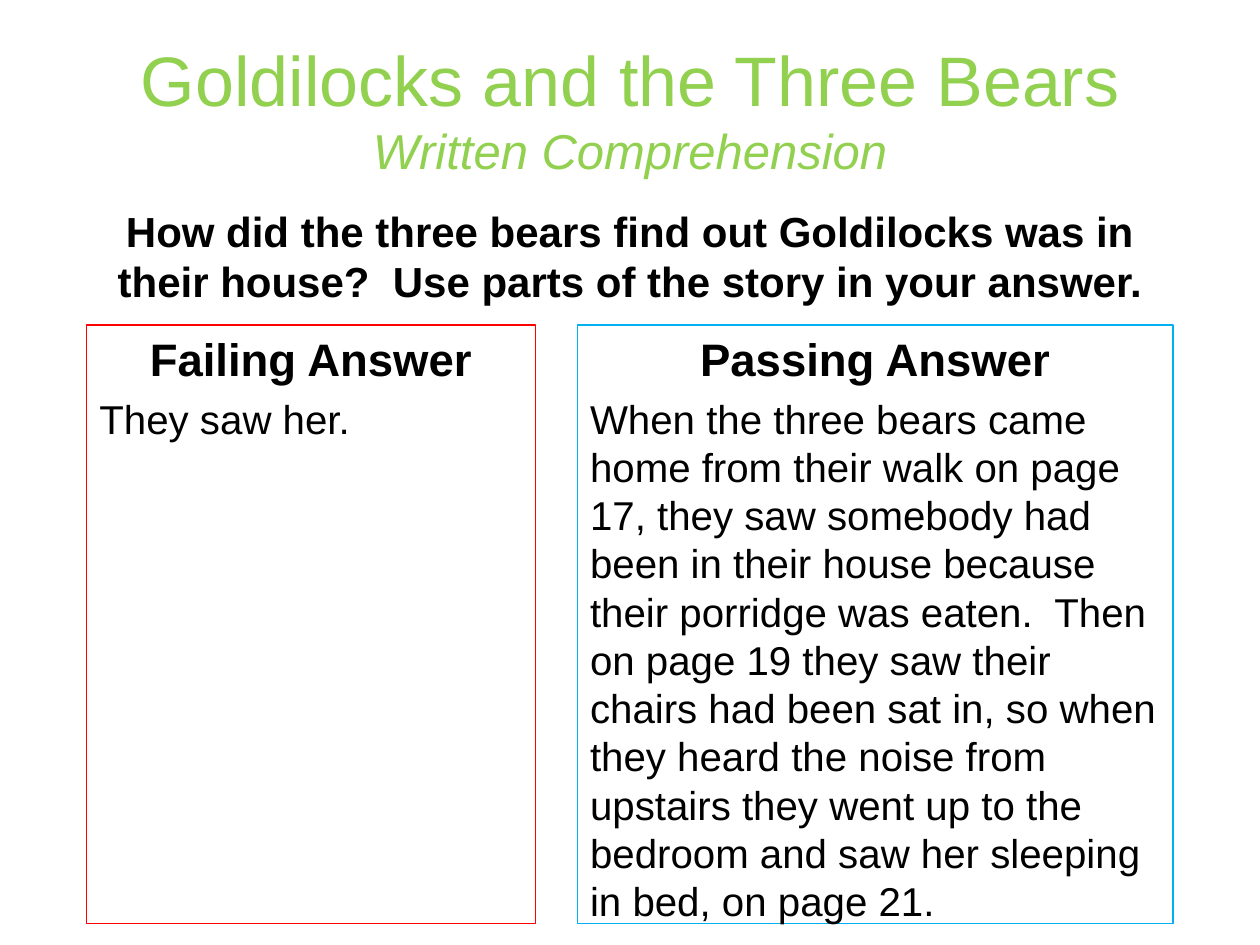
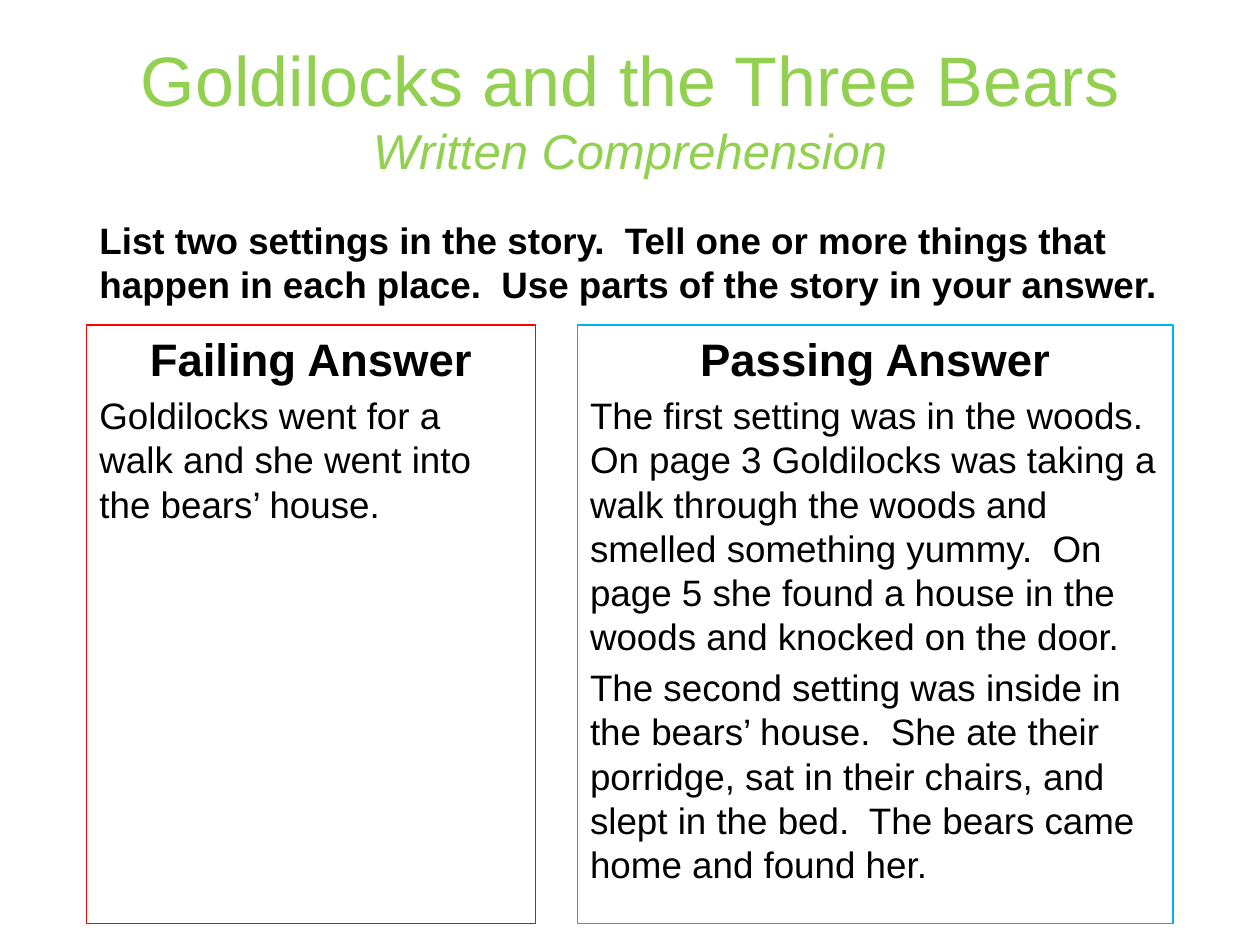
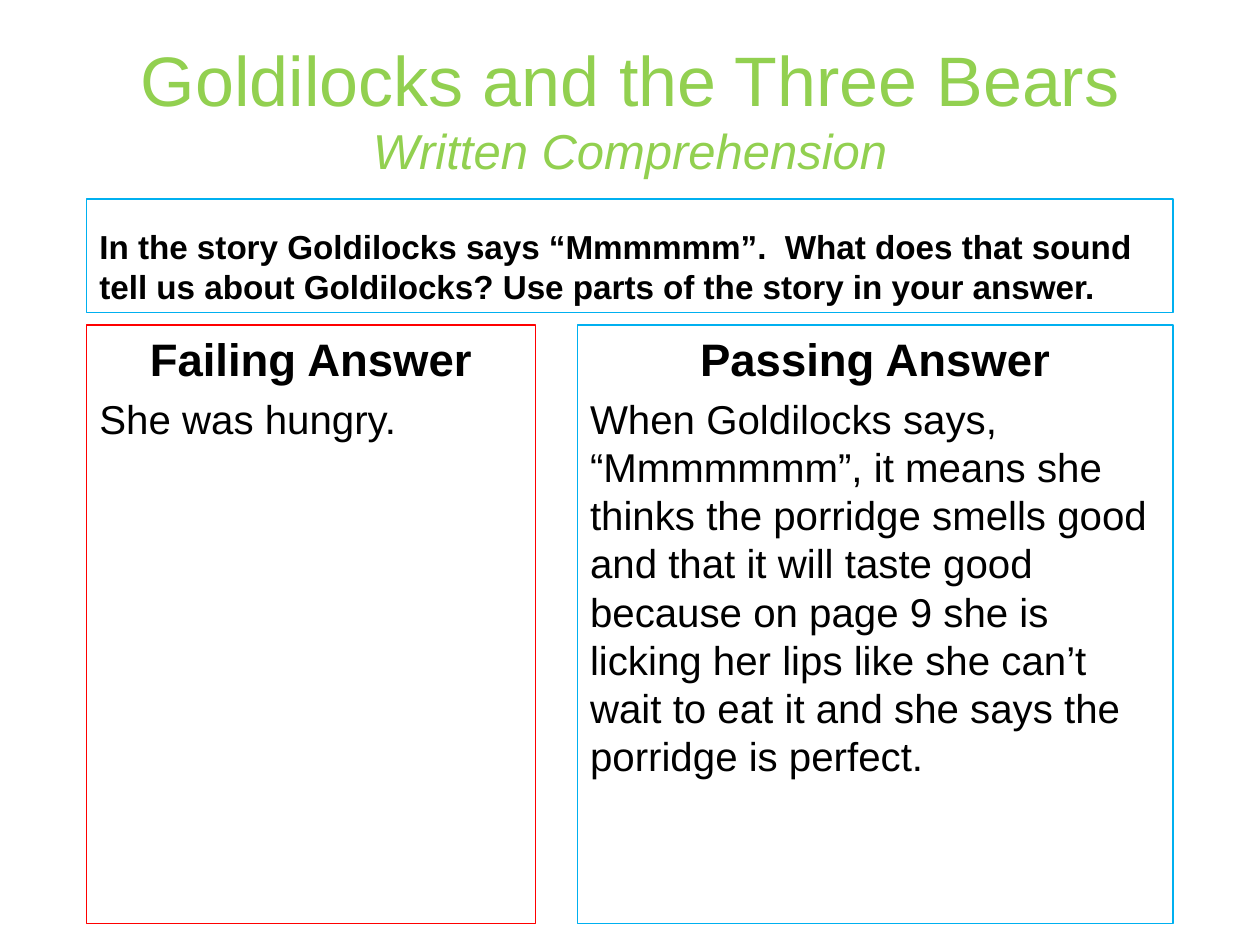
from lxml.etree import SubElement
from pptx import Presentation
from pptx.dml.color import RGBColor
from pptx.enum.text import MSO_ANCHOR as Anchor, MSO_AUTO_SIZE as AutoSize, PP_ALIGN as Align
from pptx.oxml.ns import qn
from pptx.util import Cm, Pt

FONT = "Arial"
GREEN, BLACK, RED, BLUE = "92D050", "000000", "FF0000", "00B0F0"
LEFT, WIDTH = 1.75, 21.9
ANSWER_TOP, ANSWER_HEIGHT = 6.55, 12.07
FAILING_WIDTH, PASSING_WIDTH = 9.04, 12.01
COMPARISON_LAYOUT = 4
QUESTION, FAILING, UNUSED, PASSING = 1, 2, 3, 4


def color(value):
    return RGBColor.from_string(value)


class ComprehensionDeck:
    def __init__(self):
        self.prs = Presentation()
        self.prs.slide_width, self.prs.slide_height = Cm(25.4), Cm(19.05)

    def new_slide(self):
        layout = self.prs.slide_layouts[COMPARISON_LAYOUT]
        self.slide = self.prs.slides.add_slide(layout)
        unused = self.slide.placeholders[UNUSED].element
        unused.getparent().remove(unused)

    def place(self, index, box, anchor, border=None):
        area = self.slide.placeholders[index]
        area.left, area.top, area.width, area.height = map(Cm, box)
        frame = area.text_frame
        frame.word_wrap = True
        frame.auto_size = AutoSize.NONE
        frame.vertical_anchor = anchor
        if border:
            area.line.color.rgb = color(border)
            area.line.width = Pt(0.75)
        return frame

    def style(self, paragraph, size, ink=BLACK, bold=False, align=Align.LEFT, before=0):
        props = paragraph._p.get_or_add_pPr()
        props.set("marL", "0")
        props.set("indent", "0")
        SubElement(props, qn("a:buNone"))
        paragraph.alignment = align
        paragraph.space_before = Pt(before)
        font = paragraph.font
        font.name, font.size, font.bold = FONT, Pt(size), bold
        font.color.rgb = color(ink)

    def title(self, story, subtitle):
        frame = self.place(0, (LEFT, 0.33, WIDTH, 3.68), Anchor.MIDDLE)
        heading = frame.paragraphs[0]
        self.style(heading, 40, GREEN, align=Align.CENTER)
        heading.add_run().text = story
        heading.add_line_break()
        second_line = heading.add_run()
        second_line.text = subtitle
        second_line.font.size = Pt(28)
        second_line.font.italic = True

    def question(self, text, size, align, border):
        frame = self.place(QUESTION, (LEFT, 4.01, WIDTH, 2.29), Anchor.BOTTOM, border)
        frame.text = text
        self.style(frame.paragraphs[0], size, bold=True, align=align)

    def answer(self, index, heading, left, width, border, paragraphs, size):
        box = (left, ANSWER_TOP, width, ANSWER_HEIGHT)
        frame = self.place(index, box, Anchor.TOP, border)
        frame.text = heading
        self.style(frame.paragraphs[0], 26, bold=True, align=Align.CENTER)
        for text in paragraphs:
            paragraph = frame.add_paragraph()
            paragraph.text = text
            self.style(paragraph, size, before=size * 0.2)


EXERCISES = [
    dict(
        question=("How did the three bears find out Goldilocks was in their house?  "
                  "Use parts of the story in your answer.", 24, Align.CENTER, None),
        size=23,
        failing=["They saw her."],
        passing=["When the three bears came home from their walk on page 17, they saw "
                 "somebody had been in their house because their porridge was eaten.  "
                 "Then on page 19 they saw their chairs had been sat in, so when they "
                 "heard the noise from upstairs they went up to the bedroom and saw her "
                 "sleeping in bed, on page 21."],
    ),
    dict(
        question=("List two settings in the story.  Tell one or more things that happen "
                  "in each place.  Use parts of the story in your answer.",
                  21, Align.LEFT, None),
        size=21,
        failing=["Goldilocks went for a walk and she went into the bears’ house."],
        passing=["The first setting was in the woods.  On page 3 Goldilocks was taking a "
                 "walk through the woods and smelled something yummy.  On page 5 she "
                 "found a house in the woods and knocked on the door.",
                 "The second setting was inside in the bears’ house.  She ate their "
                 "porridge, sat in their chairs, and slept in the bed.  The bears came "
                 "home and found her."],
    ),
    dict(
        question=("In the story Goldilocks says “Mmmmmm”.  What does that sound tell us "
                  "about Goldilocks? Use parts of the story in your answer.",
                  19, Align.LEFT, BLUE),
        size=23,
        failing=["She was hungry."],
        passing=["When Goldilocks says, “Mmmmmmm”, it means she thinks the porridge "
                 "smells good and that it will taste good because on page 9 she is "
                 "licking her lips like she can’t wait to eat it and she says the "
                 "porridge is perfect."],
    ),
]


def main():
    deck = ComprehensionDeck()
    passing_left = LEFT + WIDTH - PASSING_WIDTH
    for exercise in EXERCISES:
        size = exercise["size"]
        deck.new_slide()
        deck.title("Goldilocks and the Three Bears", "Written Comprehension")
        deck.question(*exercise["question"])
        deck.answer(FAILING, "Failing Answer", LEFT, FAILING_WIDTH, RED,
                    exercise["failing"], size)
        deck.answer(PASSING, "Passing Answer", passing_left, PASSING_WIDTH, BLUE,
                    exercise["passing"], size)
    deck.prs.save("out.pptx")


if __name__ == "__main__":
    main()
